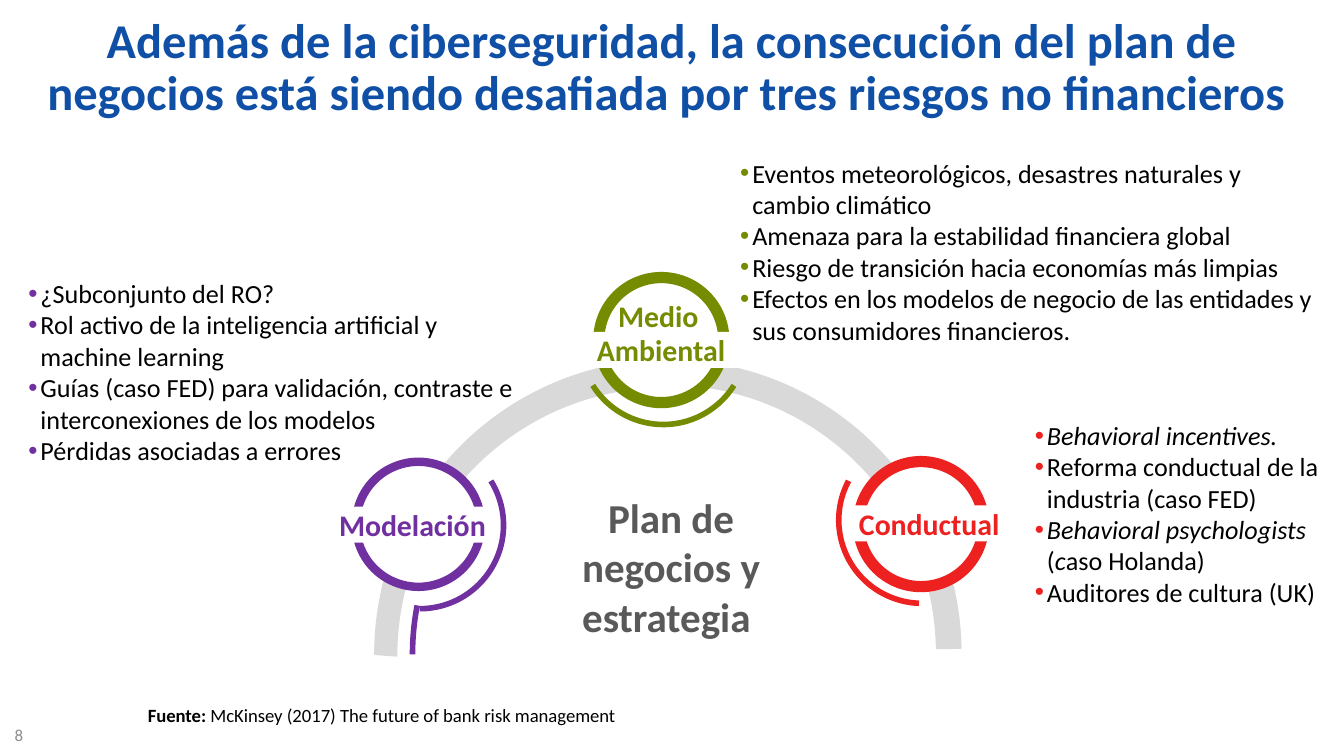
from math import cos, radians, sin, tan
from lxml.etree import SubElement
from pptx import Presentation
from pptx.dml.color import RGBColor
from pptx.enum.shapes import MSO_SHAPE as Form
from pptx.enum.text import MSO_ANCHOR as Anchor, MSO_AUTO_SIZE as Fit, PP_ALIGN as Align
from pptx.oxml.ns import qn
from pptx.util import Pt

C = {"blue": "0F4FA6", "green": "758B00", "purple": "7030A0", "red": "EE2121",
     "band": "D9D9D9", "dark": "595959", "gray": "8C8C8C",
     "black": "000000", "white": "FFFFFF"}
C = {name: RGBColor.from_string(code) for name, code in C.items()}

deck = Presentation()
deck.slide_width, deck.slide_height = Pt(720), Pt(405)
shapes = deck.slides.add_slide(deck.slide_layouts[6]).shapes


def text(box, paras, size, color, bold=False, align=Align.LEFT, inset=0,
         anchor=Anchor.TOP, bullet=None, wrap=True, plate=False, fit=True):
    """Each paragraph is a list of (words, style); style is "", "b" or "i"."""
    place = map(Pt, box)
    if plate:
        shape = shapes.add_shape(Form.RECTANGLE, *place)
        shape.shadow.inherit = False
        shape.fill.solid()
        shape.fill.fore_color.rgb = C["white"]
        shape.line.fill.background()
    else:
        shape = shapes.add_textbox(*place)
    frame = shape.text_frame
    frame.word_wrap, frame.vertical_anchor = wrap, anchor
    frame.auto_size = Fit.SHAPE_TO_FIT_TEXT if fit else Fit.NONE
    frame.margin_left = frame.margin_right = Pt(inset)
    frame.margin_top = frame.margin_bottom = Pt(inset)
    for i, runs in enumerate(paras):
        para = frame.add_paragraph() if i else frame.paragraphs[0]
        para.alignment = align
        if bullet:
            props = para._p.get_or_add_pPr()
            props.set("marL", str(Pt(6.5)))
            props.set("indent", str(-Pt(6.5)))
            tint = SubElement(props, qn("a:buClr"))
            SubElement(tint, qn("a:srgbClr")).set("val", str(C[bullet]))
            SubElement(props, qn("a:buFont")).set("typeface", "Arial")
            SubElement(props, qn("a:buChar")).set("char", "•")
        for words, style in runs:
            run = para.add_run()
            run.text = words
            font = run.font
            font.name, font.size = "Calibri", Pt(size)
            font.color.rgb = C[color]
            font.bold, font.italic = bold or style == "b", style == "i"
    return shape


def curve(arcs, color, width, closed=False, turn=0):
    """Join arcs of (centre x, centre y, radius, stops in degrees)."""
    ends, bends = [], []
    for x, y, r, stops in arcs:
        for i, stop in enumerate(stops):
            b = radians(stop)
            ends.append((Pt(x + r * cos(b)), Pt(y + r * sin(b))))
            if i:
                a = radians(stops[i - 1])
                k = 4 / 3 * tan((b - a) / 4)
                bends.append([
                    (Pt(x + r * (cos(a) - k * sin(a))), Pt(y + r * (sin(a) + k * cos(a)))),
                    (Pt(x + r * (cos(b) + k * sin(b))), Pt(y + r * (sin(b) - k * cos(b))))])
            else:
                bends.append(None)
    path = shapes.build_freeform(*ends[0])
    path.add_line_segments(ends[1:], close=closed)
    shape = path.convert_to_shape()
    # Bend the straight segments into cubic curves
    for line, bend in zip(list(shape._element.iter(qn("a:lnTo"))), bends[1:]):
        if bend:
            line.tag = qn("a:cubicBezTo")
            for i, (x, y) in enumerate(bend):
                point = SubElement(line, qn("a:pt"))
                point.set("x", str(x - shape.left))
                point.set("y", str(y - shape.top))
                line.insert(i, point)
    shape.rotation = turn
    shape.shadow.inherit = False
    shape.line.color.rgb, shape.line.width = C[color], Pt(width)
    if closed:
        shape.fill.solid()
        shape.fill.fore_color.rgb = C[color]
    else:
        shape.fill.background()


# Gray arch in two halves
curve([(358.5, 350.6, 157.7, (180, 270)), (356.5, 351.4, 144, (270, 180))],
      "band", 0.75, True)
curve([(357.8, 350, 157, (270, 359)), (357.8, 350, 144, (359, 270))],
      "band", 0.75, True)

# Risks: ring corner and line, arc corner, radius, stops and turn, label, notes
risks = [
    ("purple", (190.7, 247.4), 4.5, (219.8, 260.7), 44.8, (157, 180, 270, 279), 171.1,
     (177.4, 271.4, 87.1, 19.4), "Modelación",
     (11.6, 145.1, 272.9, 108.7), [
         [("¿Subconjunto del RO?", "")],
         [("Rol activo de la inteligencia artificial y machine learning", "")],
         [("Guías (caso FED) para validación, contraste e "
           "interconexiones de los modelos", "")],
         [("Pérdidas asociadas a errores", "")]]),
    ("red", (459.9, 247.3), 6, (448, 261.8), 44.6, (160.6, 180, 270, 276.6), 291.5,
     (453.9, 270.7, 87.8, 19.4), "Conductual",
     (550.8, 221.1, 160.6, 122.4), [
         [("Behavioral incentives.", "i")],
         [("Reforma conductual de la industria (caso FED)", "")],
         [("Behavioral psychologists ", "i"), ("(", ""), ("c", "i"),
          ("aso Holanda)", "")],
         [("Auditores de cultura (UK)", "")]]),
    ("green", (320.8, 148.7), 6, (331.2, 177.8), 44.6, (160.6, 180, 270, 276.6), 231.4,
     (310.6, 177.8, 87.1, 19.4), "Ambiental",
     (392.9, 80.6, 315.4, 108.7), [
         [("Eventos meteorológicos, desastres naturales y cambio climático", "")],
         [("Amenaza para la estabilidad financiera global", "")],
         [("Riesgo de transición hacia economías más limpias", "")],
         [("Efectos en los modelos de negocio de las entidades y "
           "sus consumidores financieros.", "")]]),
]
for color, (left, top), width, (x, y), r, stops, turn, box, label, area, notes in risks:
    ring = shapes.add_shape(Form.OVAL, Pt(left), Pt(top), Pt(67), Pt(67))
    ring.shadow.inherit = False
    ring.fill.solid()
    ring.fill.fore_color.rgb = C["white"]
    ring.line.color.rgb, ring.line.width = C[color], Pt(width)
    if color == "purple":
        curve([(358.5, 350.6, 137.5, (191, 180))], color, 3)
    curve([(x + r, y + r, r, stops)], color, 3, turn=turn)
    if color == "green":
        text((314.2, 159.4, 77, 19.4), [[("Medio", "")]], 16, color, True, Align.CENTER)
    text(box, [[(label, "")]], 16, color, True, Align.CENTER, plate=True)
    text(area, notes, 14, "black", inset=3.6, bullet=color)

# Goal in the middle
text((283.9, 276.8, 151.2, 53.3), [[("Plan de negocios y estrategia ", "")]],
     22, "dark", True, Align.CENTER, anchor=Anchor.MIDDLE, plate=True)

# Source, title and page number
text((75.6, 373.3, 260, 19.4),
     [[("Fuente: ", "b"), ("McKinsey (2017) The future of bank risk management", "")]],
     10, "black", inset=3.6, wrap=False)
title = text((0.7, 0, 719.3, 73.4),
             [[("Además de la ciberseguridad, la consecución del plan de negocios "
                "está siendo desafiada por tres riesgos no financieros ", "")]],
             26, "blue", True, Align.CENTER, 7.2, Anchor.MIDDLE, fit=False)
title.text_frame.paragraphs[0].line_spacing = 0.9
text((0.7, 383, 162, 21.6), [[("8", "")]], 9, "gray", inset=7.2,
     anchor=Anchor.MIDDLE, fit=False)

deck.save("out.pptx")
